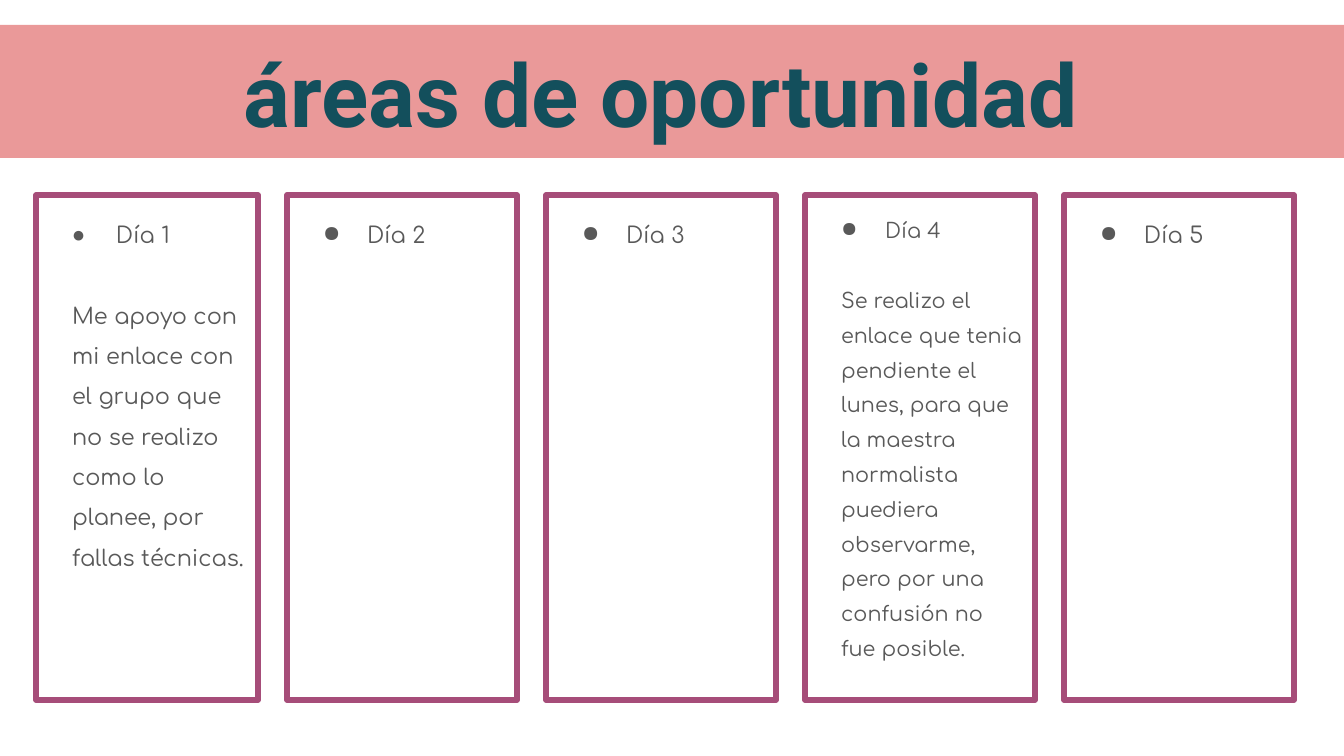
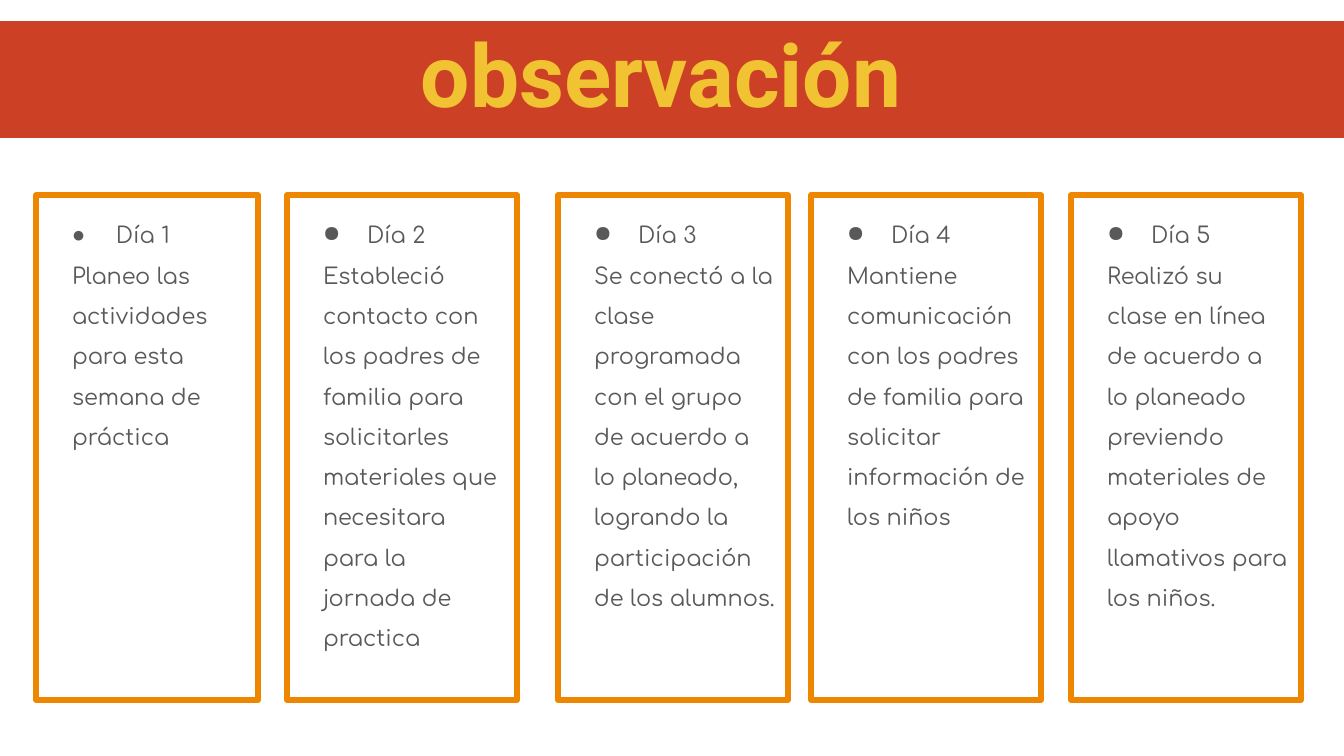
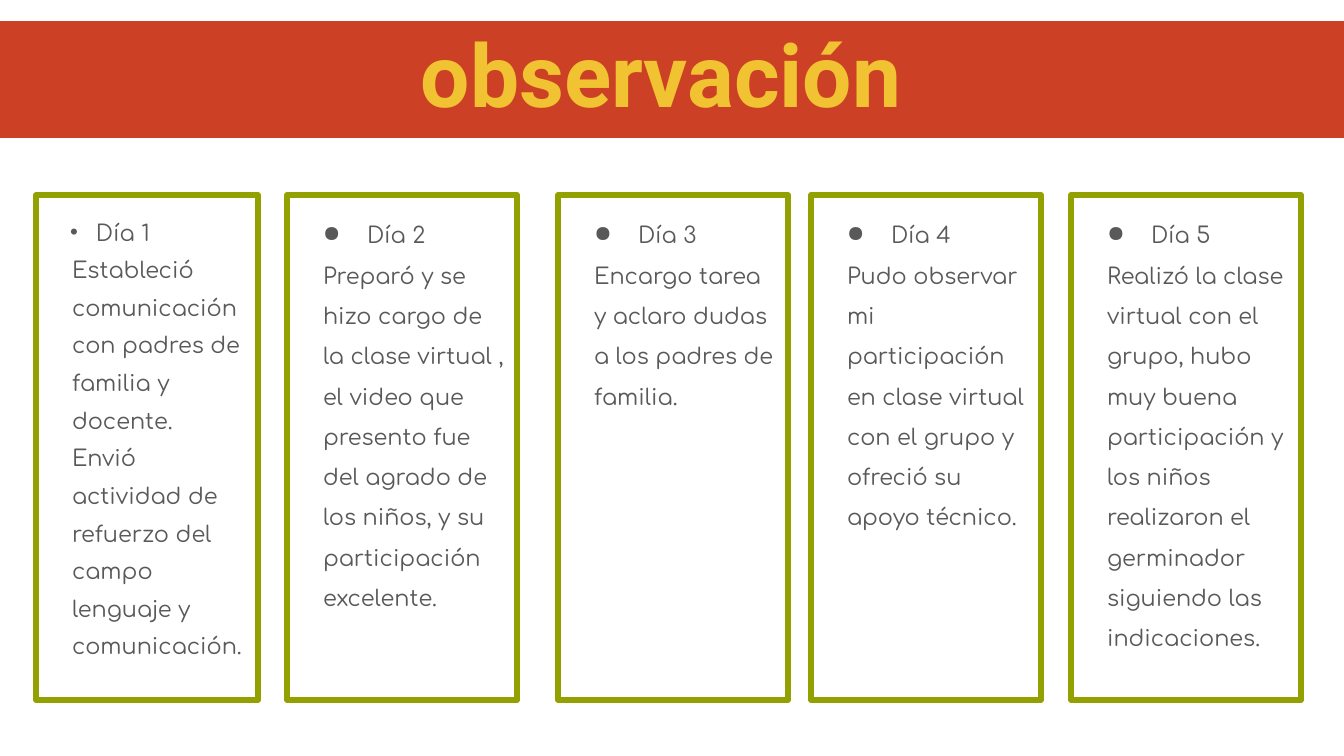
from lxml.etree import SubElement
from pptx import Presentation
from pptx.dml.color import RGBColor
from pptx.enum.text import MSO_ANCHOR as Anchor, MSO_AUTO_SIZE as AutoSize, PP_ALIGN as Align
from pptx.oxml.ns import qn
from pptx.util import Emu, Pt

GREY = "595959"
RED_BAND = {"title": "observación ", "band": "CC4125", "ink": "F1C232", "top": 21, "height": 117}
NORMAL = {"size": 12, "spacing": 1.5, "gap": 0, "bullet": "●", "indent": 67, "hang": 44}
GAPPED = {**NORMAL, "gap": 40}
SMALL = {**NORMAL, "size": 11.1, "spacing": 1.4, "gap": 35}
TIGHT = {**NORMAL, "spacing": 1.4, "bullet": "•", "indent": 47, "hang": 26}
EVEN_LEFTS = [36] + [287 + 259 * step for step in range(4)]
LOOSE_LEFTS = [36, 287, 558, 811, 1071]

SLIDES = [
    {
        "title": "áreas de oportunidad ", "band": "EA9999", "ink": "134F5C",
        "top": 25, "height": 133, "border": "A64D79", "lefts": EVEN_LEFTS,
        "days": [
            ["Me apoyo con mi enlace con el grupo que no se realizo como lo planee, por fallas técnicas."],
            [],
            [],
            ["Se realizo el enlace que tenia pendiente el lunes, para que la maestra normalista "
             "puediera observarme, pero por una confusión no fue posible."],
            [],
        ],
        "styles": {1: GAPPED, 4: SMALL},
    },
    {
        **RED_BAND, "border": "EF8600", "lefts": LOOSE_LEFTS,
        "days": [
            ["Planeo las actividades para esta semana de práctica"],
            ["Estableció contacto con los padres de familia para solicitarles materiales "
             "que necesitara para la jornada de practica"],
            ["Se conectó a la clase programada con el grupo de acuerdo a lo planeado, "
             "logrando la participación de los alumnos."],
            ["Mantiene comunicación con los padres de familia para solicitar información de los niños"],
            ["Realizó su clase en línea de acuerdo a lo planeado previendo materiales de apoyo "
             "llamativos para los niños."],
        ],
        "styles": {},
    },
    {
        **RED_BAND, "border": "92A000", "lefts": LOOSE_LEFTS,
        "days": [
            ["Estableció comunicación con padres de familia y docente.",
             "Envió actividad de refuerzo del campo lenguaje y comunicación."],
            ["Preparó y se hizo cargo de la clase virtual , el video que presento fue del agrado "
             "de los niños, y su participación excelente."],
            ["Encargo tarea y aclaro dudas a los padres de familia."],
            ["Pudo observar mi participación en clase virtual con el grupo y ofreció su apoyo técnico."],
            ["Realizó la clase virtual con el grupo, hubo muy buena participación y los niños "
             "realizaron el germinador siguiendo las indicaciones."],
        ],
        "styles": {1: TIGHT},
    },
]


def px(length):
    return Emu(round(length * 914400 / 134.4))


def color(hex_code):
    return RGBColor.from_string(hex_code)


def place(shape, left, top, width, height):
    shape.left, shape.top, shape.width, shape.height = map(px, (left, top, width, height))


def prepare_frame(shape, anchor):
    frame = shape.text_frame
    frame.word_wrap = True
    frame.auto_size = AutoSize.NONE
    frame.vertical_anchor = anchor
    frame.margin_left = frame.margin_right = frame.margin_top = frame.margin_bottom = px(13)
    return frame


def set_font(paragraph, name, size, hex_code, bold=False):
    font = paragraph.font
    font.name, font.size, font.bold = name, Pt(size), bold
    font.color.rgb = color(hex_code)


def set_indent(paragraph, left, hang=0, bullet=None):
    properties = paragraph._p.get_or_add_pPr()
    properties.set("marL", str(px(left)))
    properties.set("indent", str(px(-hang)))
    if bullet:
        bullet_color = SubElement(properties, qn("a:buClr"))
        SubElement(bullet_color, qn("a:srgbClr"), val=GREY)
        SubElement(properties, qn("a:buChar"), char=bullet)


def add_title(slide, content):
    title = slide.shapes.title
    place(title, 0, content["top"], 1344, content["height"])
    title.fill.solid()
    title.fill.fore_color.rgb = color(content["band"])
    paragraph = prepare_frame(title, Anchor.BOTTOM).paragraphs[0]
    paragraph.text = content["title"]
    paragraph.alignment = Align.CENTER
    set_font(paragraph, "Roboto", 46.8, content["ink"], bold=True)


def fill_card(card, heading, notes, style, border):
    card.line.color.rgb = color(border)
    card.line.width = Pt(3)
    frame = prepare_frame(card, Anchor.TOP)
    for index, text in enumerate([heading, *notes]):
        paragraph = frame.add_paragraph() if index else frame.paragraphs[0]
        paragraph.text = text
        if index:
            set_indent(paragraph, 23)
        else:
            set_indent(paragraph, style["indent"], style["hang"], style["bullet"])
        paragraph.alignment = Align.LEFT
        paragraph.line_spacing = style["spacing"]
        paragraph.space_before = px(style["gap"] if index == 1 else 0)
        set_font(paragraph, "Comfortaa", style["size"], GREY)


def add_cards(slide, content):
    for day, (left, notes) in enumerate(zip(content["lefts"], content["days"]), 1):
        card = slide.placeholders[1] if day == 1 else slide.shapes.add_textbox(0, 0, 0, 0)
        place(card, left, 195, 222 if day == 1 else 230, 505)
        fill_card(card, f"Día {day}", notes, content["styles"].get(day, NORMAL), content["border"])


def main():
    """Build the weekly practice slides and save them."""
    presentation = Presentation()
    presentation.slide_width, presentation.slide_height = px(1344), px(756)
    for content in SLIDES:
        slide = presentation.slides.add_slide(presentation.slide_layouts[0])
        add_title(slide, content)
        add_cards(slide, content)
    presentation.save("out.pptx")


if __name__ == "__main__":
    main()
